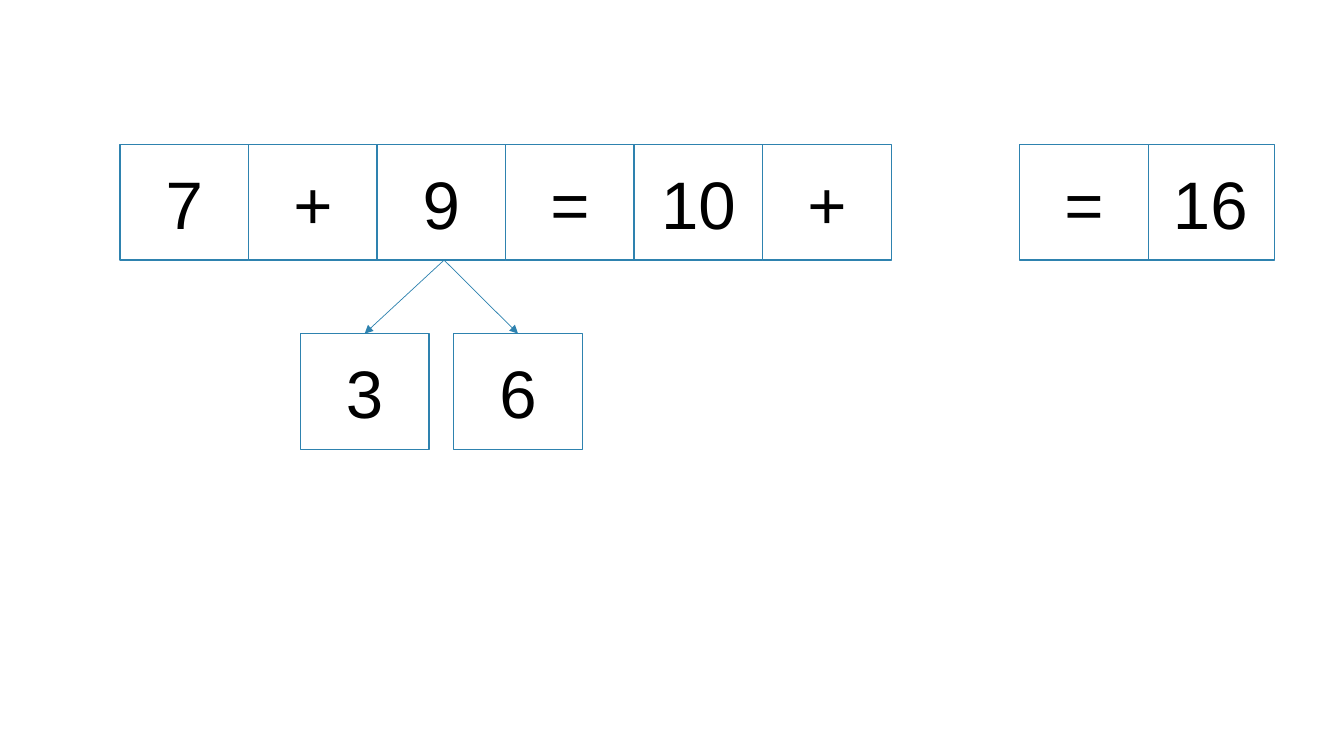
from lxml.etree import SubElement
from pptx import Presentation
from pptx.dml.color import RGBColor
from pptx.enum.shapes import MSO_CONNECTOR, MSO_SHAPE
from pptx.enum.text import MSO_ANCHOR, PP_ALIGN
from pptx.oxml.ns import qn
from pptx.util import Pt

COLORS = {"card": "FFFFFF", "edge": "2E82AF", "digit": "000000"}
CARD_WIDTH, CARD_HEIGHT = 92, 82.8
EQUATION_LEFT, EQUATION_TOP, STEP = 85.7, 103, 91.8
RESULT_LEFT = 818.6
SPLIT_TOP = 238.3
NINE_BOTTOM = (317.2, EQUATION_TOP + CARD_HEIGHT)


def color(name):
    return RGBColor.from_string(COLORS[name])


def add_card(symbol, left, top):
    card = slide.shapes.add_shape(
        MSO_SHAPE.RECTANGLE, Pt(left), Pt(top), Pt(CARD_WIDTH), Pt(CARD_HEIGHT))
    card.shadow.inherit = False
    card.fill.solid()
    card.fill.fore_color.rgb = color("card")
    card.line.color.rgb = color("edge")
    card.line.width = Pt(1)
    card.text_frame.vertical_anchor = MSO_ANCHOR.MIDDLE
    paragraph = card.text_frame.paragraphs[0]
    paragraph.alignment = PP_ALIGN.CENTER
    run = paragraph.add_run()
    run.text = symbol
    run.font.name = "Arial"
    run.font.size = Pt(48)
    run.font.color.rgb = color("digit")


deck = Presentation()
deck.slide_width, deck.slide_height = Pt(960), Pt(540)
slide = deck.slides.add_slide(deck.slide_layouts[6])

add_card("16", RESULT_LEFT, EQUATION_TOP)
equation = {0: "7", 1: "+", 2: "9", 3: "=", 4: "10", 5: "+", 7: "="}
for column, symbol in equation.items():
    add_card(symbol, EQUATION_LEFT + column * STEP, EQUATION_TOP)

for addend, left in (("3", 214.5), ("6", 324)):
    add_card(addend, left, SPLIT_TOP)
    arrow = slide.shapes.add_connector(
        MSO_CONNECTOR.STRAIGHT, Pt(NINE_BOTTOM[0]), Pt(NINE_BOTTOM[1]),
        Pt(left + CARD_WIDTH / 2), Pt(SPLIT_TOP))
    arrow.line.color.rgb = color("edge")
    arrow.line.width = Pt(0.5)
    SubElement(arrow.line._get_or_add_ln(), qn("a:tailEnd"), type="triangle")
    SubElement(arrow._element.spPr, qn("a:effectLst"))

deck.save("out.pptx")
